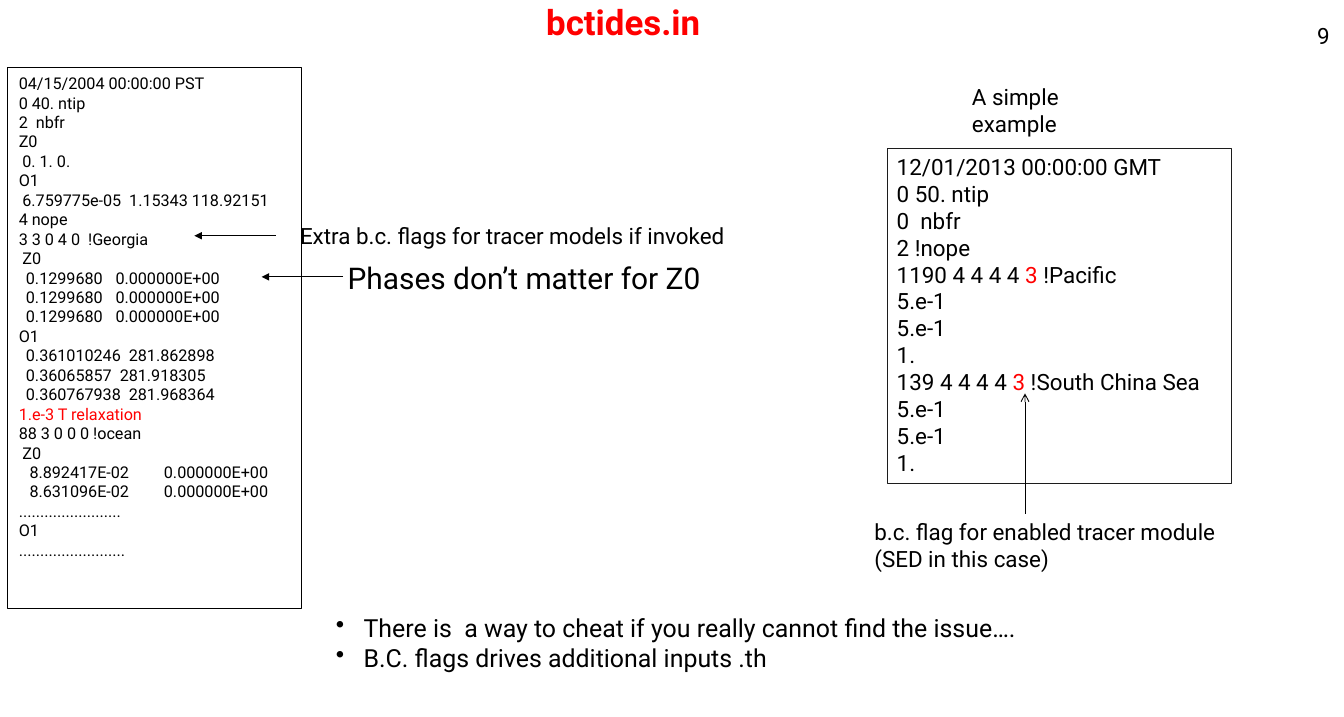
"""Build the bctides.in slide with two annotated input listings."""
from dataclasses import dataclass

import pptx
import pptx.dml.color
import pptx.enum.shapes
import pptx.enum.text
import pptx.oxml
import pptx.oxml.ns
import pptx.util

Inches = pptx.util.Inches
Align = pptx.enum.text.PP_ALIGN
Anchor = pptx.enum.text.MSO_ANCHOR


@dataclass(frozen=True)
class Theme:
    font: str = "Roboto"
    ink: str = "000000"
    frame: str = "1C1C1C"
    highlight: str = "FF0000"
    title: int = 28
    remark: int = 24
    bullet: int = 20
    body: int = 18
    listing: int = 13
    line: float = 0.75
    space: float = 0.04
    narrow: tuple = (0.1, 0.05, 0.1, 0.05)
    wide: tuple = (0.13, 0.07, 0.13, 0.07)


THEME = Theme()

TIDAL_LISTING = """04/15/2004 00:00:00 PST
0 40. ntip
2  nbfr
Z0
 0. 1. 0.
O1
 6.759775e-05  1.15343 118.92151
4 nope
3 3 0 4 0  !Georgia
 Z0
  0.1299680\t0.000000E+00
  0.1299680\t0.000000E+00
  0.1299680\t0.000000E+00
O1
  0.361010246  281.862898
  0.36065857  281.918305
  0.360767938  281.968364
|1.e-3 T relaxation|
88 3 0 0 0 !ocean
 Z0
   8.892417E-02\t0.000000E+00
   8.631096E-02\t0.000000E+00
........................
O1
........................."""

SIMPLE_LISTING = """12/01/2013 00:00:00 GMT
0 50. ntip
0  nbfr
2 !nope
1190 4 4 4 4 |3| !Pacific
5.e-1
5.e-1
1.
139 4 4 4 4 |3| !South China Sea
5.e-1
5.e-1
1."""

BULLETS = """There is  a way to cheat if you really cannot find the issue….
B.C. flags drives additional inputs .th"""


def colour(value):
    """Return a colour object for a hexadecimal value."""
    return pptx.dml.color.RGBColor.from_string(value)


def append_xml(parent, tag, **attributes):
    """Append a drawing element with the given attributes."""
    element = pptx.oxml.parse_xml(f"<a:{tag} {pptx.oxml.ns.nsdecls('a')}/>")
    for name, value in attributes.items():
        element.set(name, str(value))
    parent.append(element)
    return element


def write_text(frame, text, *, size, ink=THEME.ink, bold=False, align=Align.LEFT,
               anchor=Anchor.TOP, insets=THEME.narrow, bullet=None, tabs=None):
    """Write one paragraph per line, with text between bars highlighted."""
    frame.word_wrap = True
    frame.auto_size = pptx.enum.text.MSO_AUTO_SIZE.NONE
    frame.vertical_anchor = anchor
    sides = ("margin_left", "margin_top", "margin_right", "margin_bottom")
    for side, inset in zip(sides, insets):
        setattr(frame, side, Inches(inset))
    for index, line in enumerate(text.split("\n")):
        paragraph = frame.paragraphs[0] if index == 0 else frame.add_paragraph()
        paragraph.alignment = align
        content = line.lstrip(" ")
        depth = len(line) - len(content)
        properties = paragraph._p.get_or_add_pPr()
        if depth:
            properties.set("marL", str(Inches(depth * THEME.space)))
            properties.set("indent", "0")
        if bullet:
            properties.set("marL", str(Inches(0.31)))
            properties.set("indent", str(-Inches(0.31)))
            append_xml(properties, "buChar", char=bullet)
        if tabs and "\t" in content:
            stops = append_xml(properties, "tabLst")
            append_xml(stops, "tab", pos=Inches(tabs[depth]), algn="l")
        for part, words in enumerate(content.split("|")):
            if words:
                run = paragraph.add_run()
                run.text = words
                run.font.name = THEME.font
                run.font.size = pptx.util.Pt(size)
                run.font.bold = bold
                run.font.color.rgb = colour(THEME.highlight if part % 2 else ink)


class SlideBuilder:
    """Hold the theme and the current slide."""

    def __init__(self, presentation, theme):
        """Add a title-only slide."""
        self.theme = theme
        self.slide = presentation.slides.add_slide(presentation.slide_layouts[5])

    def title(self, text, box):
        """Place and format the title placeholder."""
        shape = self.slide.shapes.title
        shape.left, shape.top, shape.width, shape.height = map(Inches, box)
        write_text(shape.text_frame, text, size=self.theme.title,
                   ink=self.theme.highlight, bold=True, align=Align.CENTER,
                   anchor=Anchor.BOTTOM, insets=self.theme.wide)

    def text(self, text, box, **text_format):
        """Add a text box."""
        shape = self.slide.shapes.add_textbox(*map(Inches, box))
        write_text(shape.text_frame, text, **text_format)

    def listing(self, text, box, outline, **text_format):
        """Add an outlined rectangle that holds a file listing."""
        rectangle = pptx.enum.shapes.MSO_SHAPE.RECTANGLE
        shape = self.slide.shapes.add_shape(rectangle, *map(Inches, box))
        shape.shadow.inherit = False
        shape.fill.background()
        shape.line.color.rgb = colour(outline)
        shape.line.width = pptx.util.Pt(self.theme.line)
        write_text(shape.text_frame, text, **text_format)

    def arrow(self, start, end, head="triangle"):
        """Add a straight arrow that points at its end."""
        straight = pptx.enum.shapes.MSO_CONNECTOR.STRAIGHT
        connector = self.slide.shapes.add_connector(straight, *map(Inches, start + end))
        connector.line.color.rgb = colour(self.theme.ink)
        connector.line.width = pptx.util.Pt(self.theme.line)
        append_xml(connector.line._get_or_add_ln(), "tailEnd", type=head)
        append_xml(connector._element.spPr, "effectLst")


def main():
    """Build and save the presentation."""
    presentation = pptx.Presentation()
    presentation.slide_width, presentation.slide_height = Inches(15), Inches(8)
    builder = SlideBuilder(presentation, THEME)

    builder.text("9", (13.97, 0.09, 1, 0.53), size=THEME.body, align=Align.RIGHT,
                 anchor=Anchor.BOTTOM, insets=THEME.wide)
    builder.title("bctides.in", (3.33, 0.18, 7.25, 0.36))

    builder.listing(TIDAL_LISTING, (0.08, 0.75, 3.29, 6.04), THEME.ink,
                    size=THEME.listing, insets=THEME.wide, tabs={2: 1.26, 3: 1.38})
    builder.arrow((3.83, 3.09), (2.92, 3.09))
    builder.text("Phases don’t matter for Z0", (3.75, 2.83, 4.3, 0.54),
                 size=THEME.remark, insets=THEME.wide)
    builder.arrow((3.08, 2.63), (2.17, 2.63))
    builder.text("Extra b.c. flags for tracer models if invoked",
                 (3.25, 2.43, 4.99, 0.4), size=THEME.body)

    builder.listing(SIMPLE_LISTING, (9.91, 1.66, 3.83, 3.74), THEME.frame,
                    size=THEME.body)
    builder.text("A simple example", (10.75, 0.88, 2.16, 0.4), size=THEME.body,
                 insets=(0.1, 0.05, 0.7, 0.05))
    builder.arrow((11.44, 5.73), (11.44, 4.39), head="arrow")
    builder.text("b.c. flag for enabled tracer module (SED in this case)",
                 (9.66, 5.73, 4.08, 0.71), size=THEME.body)

    builder.text(BULLETS, (3.65, 6.79, 8.02, 0.77), size=THEME.bullet, bullet="•")
    presentation.save("out.pptx")


if __name__ == "__main__":
    main()
